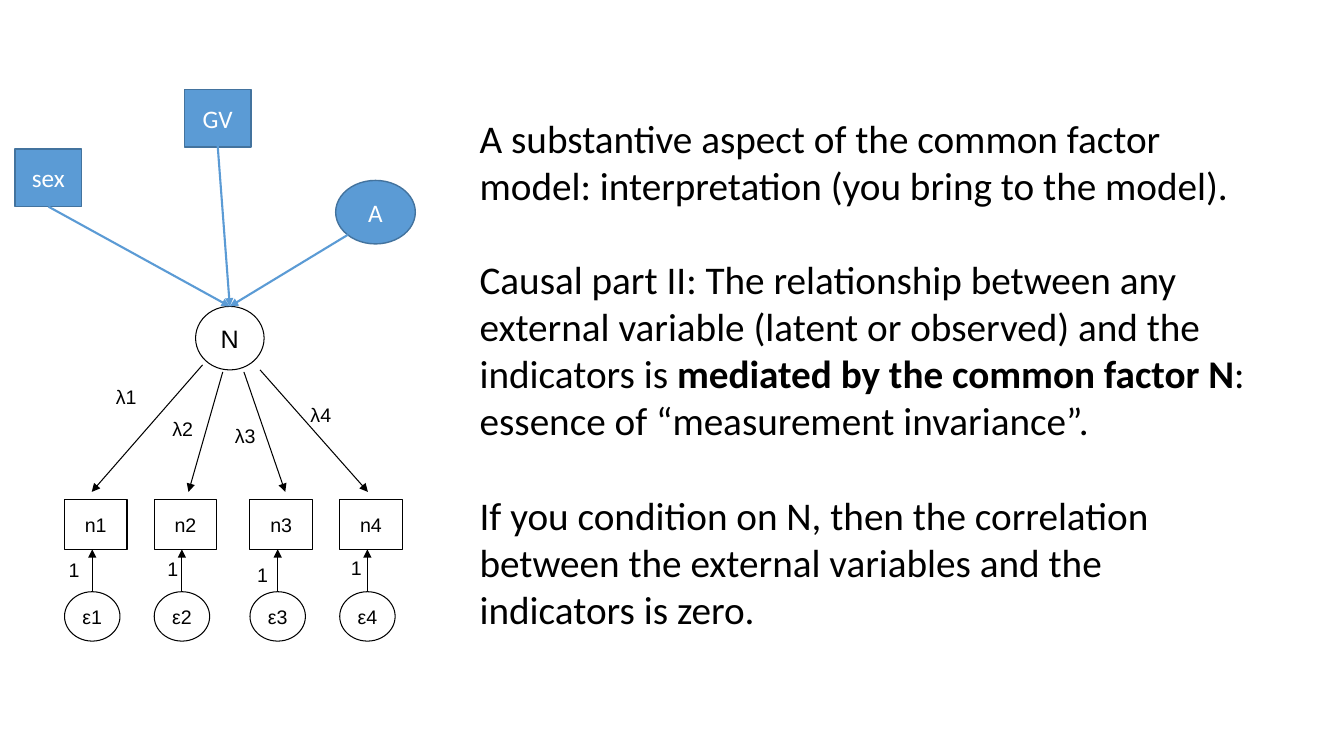
"""Draw a one-factor path model with external variables beside its reading."""
from lxml.etree import SubElement
from pptx import Presentation
from pptx.dml.color import RGBColor
from pptx.enum.shapes import MSO_CONNECTOR, MSO_SHAPE
from pptx.enum.text import MSO_ANCHOR, PP_ALIGN
from pptx.oxml.ns import qn
from pptx.util import Inches, Pt

BLACK = RGBColor(0x00, 0x00, 0x00)
WHITE = RGBColor(0xFF, 0xFF, 0xFF)
BLUE = RGBColor(0x5B, 0x9B, 0xD5)
NAVY = RGBColor(0x43, 0x73, 0x9E)
BOX, OVAL = MSO_SHAPE.RECTANGLE, MSO_SHAPE.OVAL
ITEMS = (6.4, 15.3, 24.8, 33.7)
LOADS = (
    ((20.1, 36.2), 9.1, (11, 37.9)),
    ((22.1, 36.9), 18.7, (16.6, 41.1)),
    ((24.2, 36.9), 28.3, (22.8, 41.8)),
    ((25.8, 36.7), 36.5, (30.3, 39.7)),
)
ONES = ((6.3, 55.1), (16.1, 55), (25, 55.5), (34.3, 54.9))
CAUSES = (
    ("sex", BOX, (1.5, 14.8, 6.6, 5.7), (4.8, 20.5)),
    ("A", OVAL, (33.3, 17.9, 7.9, 6.3), (34.5, 23.3)),
    ("GV", BOX, (18.3, 8.9, 6.6, 5.7), (21.6, 14.5)),
)
PROSE = (
    "A substantive aspect of the common factor model: "
    "interpretation (you bring to the model).",
    "Causal part II: The relationship between any external variable "
    "(latent or observed) and the indicators is *mediated by the common "
    "factor N*: essence of “measurement invariance”.",
    "If you condition on N, then the correlation between the external "
    "variables and the indicators is zero.",
)


def grid(*cells):
    """Turn columns and rows, ten to the inch, into lengths."""
    return [Inches(cell / 10) for cell in cells]


def write(frame, *paras, size=14, font="Arial", color=BLACK, align=PP_ALIGN.LEFT,
          pad=(0.5, 0.3), gap=0):
    """Fill a frame with paragraphs; words between asterisks are bold."""
    frame.word_wrap = True
    side, edge = grid(*pad)
    frame.margin_left = frame.margin_right = side
    frame.margin_top = frame.margin_bottom = edge
    for i, words in enumerate(paras):
        para = frame.add_paragraph() if i else frame.paragraphs[0]
        para.alignment = align
        para.space_before = Pt(gap if i else 0)
        for j, part in enumerate(words.split("*")):
            run = para.add_run()
            run.text = part
            run.font.name, run.font.size = font, Pt(size)
            run.font.bold = j % 2 == 1
            run.font.color.rgb = color


def label(slide, place, *paras, **style):
    """Add free text."""
    write(slide.shapes.add_textbox(*grid(*place)).text_frame, *paras, **style)


def node(slide, kind, place, text, fill=WHITE, edge=BLACK, width=0.75, **style):
    """Add a variable as a box or an oval with centred text."""
    shape = slide.shapes.add_shape(kind, *grid(*place))
    shape.shadow.inherit = False
    shape.fill.solid()
    shape.fill.fore_color.rgb = fill
    shape.line.color.rgb = edge
    shape.line.width = Pt(width)
    shape.text_frame.vertical_anchor = MSO_ANCHOR.MIDDLE
    write(shape.text_frame, text, align=PP_ALIGN.CENTER, **style)


def arrow(slide, start, end, color=BLACK, width=0.75):
    """Add a straight path with a head at its end."""
    path = slide.shapes.add_connector(MSO_CONNECTOR.STRAIGHT, *grid(*start, *end))
    path.line.color.rgb = color
    path.line.width = Pt(width)
    SubElement(path.line._get_or_add_ln(), qn("a:tailEnd"), type="triangle")
    SubElement(path._element.spPr, qn("a:effectLst"))


def factor(slide):
    """Draw the common factor, its items and their errors."""
    node(slide, OVAL, (19.4, 30.4, 6.8, 6.3), "Ν", size=18)
    rows = zip(ITEMS, LOADS, ONES)
    for i, (left, (start, tip, spot), one) in enumerate(rows, 1):
        mid = left + 2.75
        node(slide, BOX, (left, 49.6, 6.2, 4.9), f"n{i}")
        arrow(slide, (mid, 58.7), (mid, 54.5))
        node(slide, OVAL, (left, 58.7, 5.5, 4.9), f"ε{i}")
        arrow(slide, start, (tip, 48.8))
        label(slide, (*spot, 3.9, 3.4), f"λ{i}")
        label(slide, (*one, 3.9, 3.4), "1")


def main():
    """Build and save the slide."""
    deck = Presentation()
    deck.slide_width, deck.slide_height = grid(133.33, 75)
    slide = deck.slides.add_slide(deck.slide_layouts[6])
    label(slide, (46.6, 10.8, 79.9, 52.8), *PROSE, size=28, font="Calibri",
          pad=(1, 0.5), gap=34)
    factor(slide)
    for name, kind, place, start in CAUSES:
        node(slide, kind, place, name, fill=BLUE, edge=NAVY, width=1,
             size=18, font="Calibri", color=WHITE, pad=(1, 0.5))
        arrow(slide, start, (22.8, 30.4), color=BLUE, width=1.5)
    deck.save("out.pptx")


if __name__ == "__main__":
    main()
